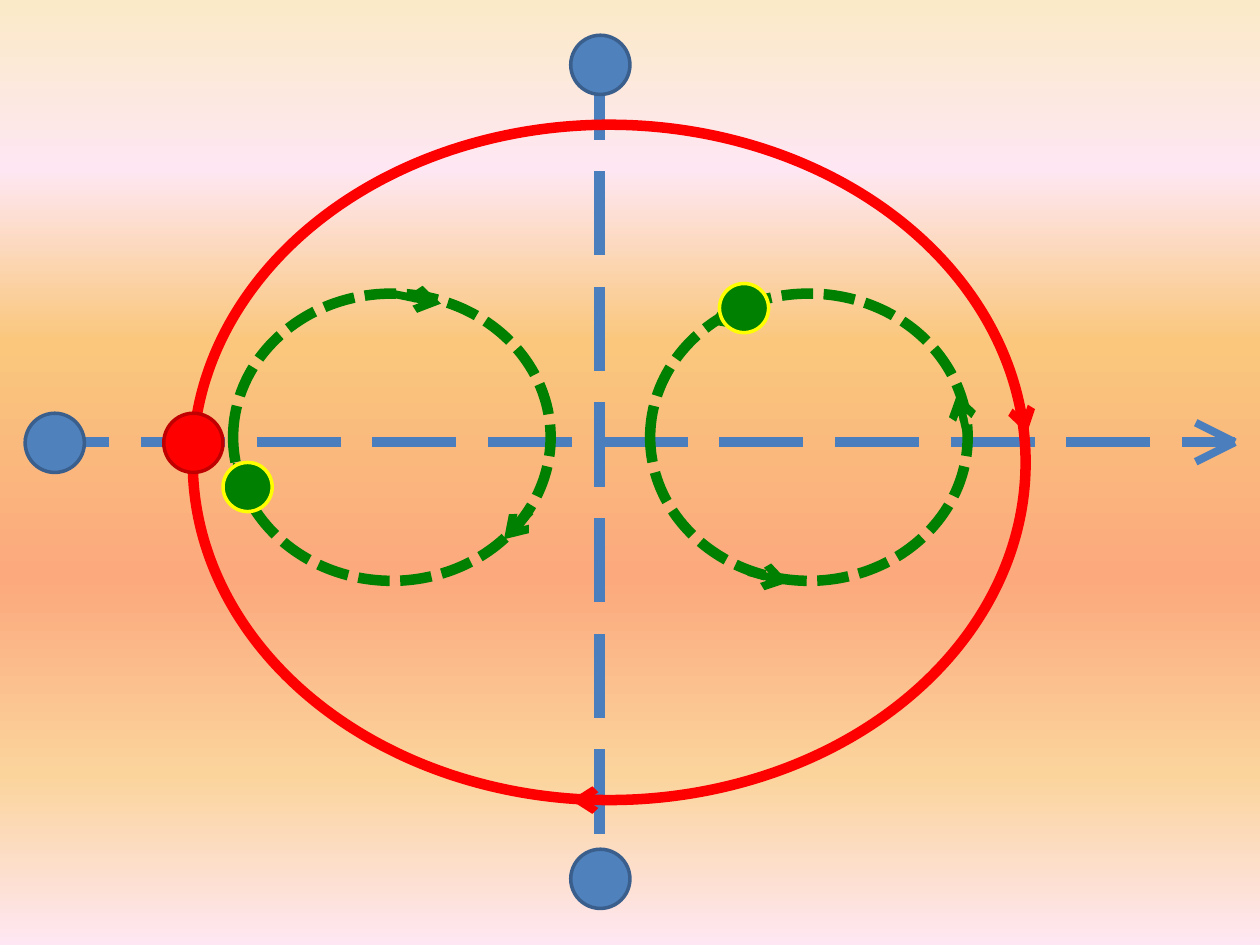
from lxml import etree
from pptx import Presentation
from pptx.dml.color import RGBColor
from pptx.enum.dml import MSO_LINE
from pptx.enum.shapes import MSO_CONNECTOR, MSO_SHAPE
from pptx.oxml.ns import qn
from pptx.util import Inches, Pt

STRAIGHT = MSO_CONNECTOR.STRAIGHT
OVAL = MSO_SHAPE.OVAL
LONG_DASH = MSO_LINE.LONG_DASH
SHORT_DASH = MSO_LINE.SQUARE_DOT
AXIS_BLUE, RED, GREEN = "4B7EBC", "FF0000", "008000"
rgb = RGBColor.from_string

prs = Presentation()
prs.slide_width, prs.slide_height = Inches(10), Inches(7.5)
slide = prs.slides.add_slide(prs.slide_layouts[6])


def add_stroke(start, end, color, width=4.5, dash=None, arrow=False):
    stroke = slide.shapes.add_connector(STRAIGHT, *map(Inches, start + end))
    stroke.line.color.rgb = rgb(color)
    stroke.line.width = Pt(width)
    if dash:
        stroke.line.dash_style = dash
    properties = stroke._element.spPr
    if arrow:
        etree.SubElement(properties.find(qn("a:ln")), qn("a:tailEnd"), type="arrow")
    etree.SubElement(properties, qn("a:effectLst"))


def add_ellipse(left, top, width, height, line, line_width, fill=None, dash=None):
    ellipse = slide.shapes.add_shape(OVAL, *map(Inches, (left, top, width, height)))
    ellipse.shadow.inherit = False
    if fill:
        ellipse.fill.solid()
        ellipse.fill.fore_color.rgb = rgb(fill)
    else:
        ellipse.fill.background()
    ellipse.line.color.rgb = rgb(line)
    ellipse.line.width = Pt(line_width)
    if dash:
        ellipse.line.dash_style = dash


# Background gradient, top to bottom
background = slide.background.fill
background.gradient()
background.gradient_angle = 270
stops = slide.element.find(".//" + qn("a:gsLst"))
for old_stop in list(stops):
    stops.remove(old_stop)
for percent, color in [(0, "FBEAC7"), (18, "FEE7F2"), (36, "FAC77D"),
                       (61, "FBA97D"), (82, "FBD49C"), (100, "FEE7F2")]:
    stop = etree.SubElement(stops, qn("a:gs"), pos=str(percent * 1000))
    etree.SubElement(stop, qn("a:srgbClr"), val=color)

# Dashed axes with open heads at all four ends
top, bottom = (4.76, 0.44), (4.76, 7.06)
left, right = (0.2, 3.51), (9.8, 3.51)
add_stroke(top, bottom, AXIS_BLUE, 6, LONG_DASH)
add_stroke(left, right, AXIS_BLUE, 6, LONG_DASH)
for (x, y), back_x, back_y in [(right, -0.31, 0), (left, 0.31, 0),
                               (top, 0, 0.24), (bottom, 0, -0.24)]:
    for side in (-0.155, 0.155):
        wing = (x + (back_x or side), y + (back_y or side))
        add_stroke((x, y), wing, AXIS_BLUE)

# Orbits
add_ellipse(1.53, 0.99, 6.61, 5.36, RED, 6)
for orbit_left in (1.85, 5.16):
    add_ellipse(orbit_left, 2.33, 2.52, 2.28, GREEN, 6, dash=SHORT_DASH)

# Direction of travel along each orbit
directions = {
    RED: [((8.07, 3.12), (8.15, 3.44)),
          ((5, 6.35), (4.53, 6.35)),
          ((1.53, 3.83), (1.53, 3.36))],
    GREEN: [((3.11, 2.33), (3.5, 2.41)),
            ((4.21, 4.06), (4, 4.28)),
            ((2.01, 3.99), (1.85, 3.67)),
            ((6.02, 2.41), (5.63, 2.57)),
            ((5.94, 4.54), (6.26, 4.62)),
            ((7.68, 3.47), (7.6, 3.12))],
}
for color, arrows in directions.items():
    for start, end in arrows:
        add_stroke(start, end, color, arrow=True)

# Bodies on the axes and orbits
bodies = [
    (0.47, "4F81BD", "3A5F8C", [(4.53, 0.28), (4.53, 6.74), (0.2, 3.28)]),
    (0.47, RED, "C00000", [(1.3, 3.28)]),
    (0.39, GREEN, "FFFF00", [(1.77, 3.67), (5.71, 2.25)]),
]
for size, fill, outline, corners in bodies:
    for corner in corners:
        add_ellipse(*corner, size, size, outline, 2, fill=fill)

prs.save("out.pptx")
